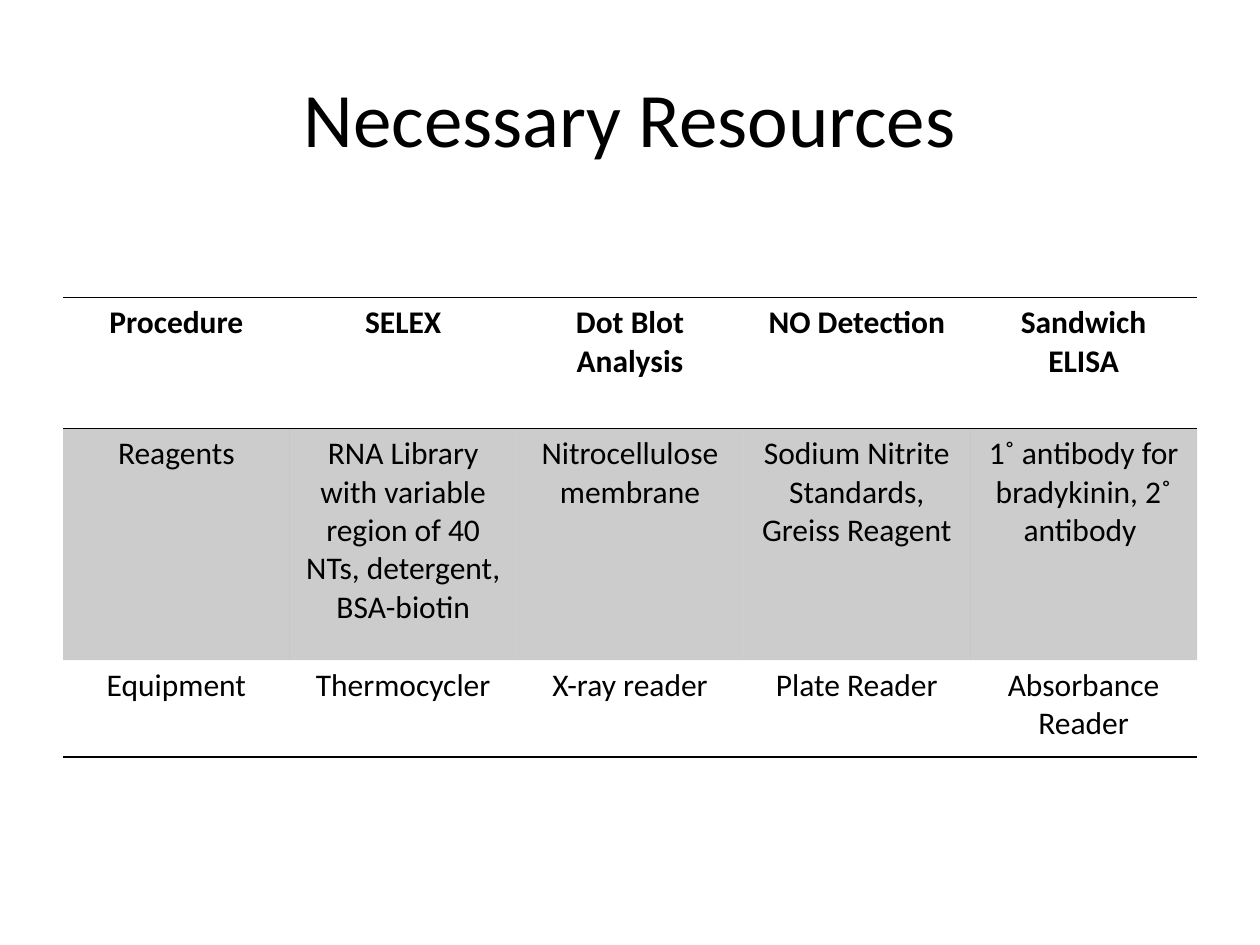
"""Build the Necessary Resources slide with its table of procedures."""
from lxml.etree import SubElement
from pptx import Presentation
from pptx.dml.color import RGBColor
from pptx.enum.text import MSO_ANCHOR, PP_ALIGN
from pptx.oxml.ns import qn
from pptx.util import Inches, Pt

TITLE = "Necessary Resources"
ROWS = [
    ["Procedure", "SELEX", "Dot Blot Analysis", "NO Detection", "Sandwich ELISA"],
    ["Reagents", "RNA Library with variable region of 40 NTs, detergent, BSA-biotin",
     "Nitrocellulose membrane", "Sodium Nitrite Standards, Greiss Reagent",
     "1˚ antibody for bradykinin, 2˚ antibody "],
    ["Equipment", "Thermocycler", "X-ray reader", "Plate Reader", "Absorbance Reader"],
]
ROW_HEIGHTS = [1.04, 1.84, 0.77]
ROW_BORDERS = [("lnT", "lnB"), ("lnT",), ("lnB",)]
SHADED_ROW = 1
SHADE_OPACITY = 20
INK = "000000"
WIDTH, HEIGHT, MARGIN = 10, 7.5, 0.5
TABLE_TOP = 2.36


def color(code):
    return RGBColor.from_string(code)


def write(frame, text, size, bold=False):
    para = frame.paragraphs[0]
    para.alignment = PP_ALIGN.CENTER
    span = para.add_run()
    span.text = text
    span.font.name = "Calibri"
    span.font.size = Pt(size)
    span.font.bold = bold
    span.font.color.rgb = color(INK)


def set_borders(cell, visible):
    properties = cell._tc.get_or_add_tcPr()
    for side in ("lnL", "lnR", "lnT", "lnB"):
        line = SubElement(properties, qn(f"a:{side}"), w=str(Pt(1)))
        if side in visible:
            fill = SubElement(line, qn("a:solidFill"))
            SubElement(fill, qn("a:srgbClr"), val=INK)
        else:
            SubElement(line, qn("a:noFill"))


def shade(cell, opacity):
    cell.fill.solid()
    cell.fill.fore_color.rgb = color(INK)
    tint = cell._tc.tcPr.find(qn("a:solidFill")).find(qn("a:srgbClr"))
    SubElement(tint, qn("a:alpha"), val=str(opacity * 1000))


def add_title(page):
    box = page.shapes.add_textbox(Inches(MARGIN), Inches(0.3),
                                  Inches(WIDTH - 2 * MARGIN), Inches(1.25))
    frame = box.text_frame
    frame.word_wrap = True
    frame.vertical_anchor = MSO_ANCHOR.MIDDLE
    write(frame, TITLE, size=44)


def add_resources(page):
    table = page.shapes.add_table(
        len(ROWS), len(ROWS[0]), Inches(MARGIN), Inches(TABLE_TOP),
        Inches(WIDTH - 2 * MARGIN), Inches(sum(ROW_HEIGHTS))).table
    table.first_row = table.horz_banding = False
    for row, texts in enumerate(ROWS):
        table.rows[row].height = Inches(ROW_HEIGHTS[row])
        for column, text in enumerate(texts):
            cell = table.cell(row, column)
            write(cell.text_frame, text, size=18, bold=row == 0)
            set_borders(cell, ROW_BORDERS[row])
            if row == SHADED_ROW:
                shade(cell, SHADE_OPACITY)
            else:
                cell.fill.background()


def main():
    deck = Presentation()
    deck.slide_width, deck.slide_height = Inches(WIDTH), Inches(HEIGHT)
    page = deck.slides.add_slide(deck.slide_layouts[6])
    add_title(page)
    add_resources(page)
    deck.save("out.pptx")


if __name__ == "__main__":
    main()
